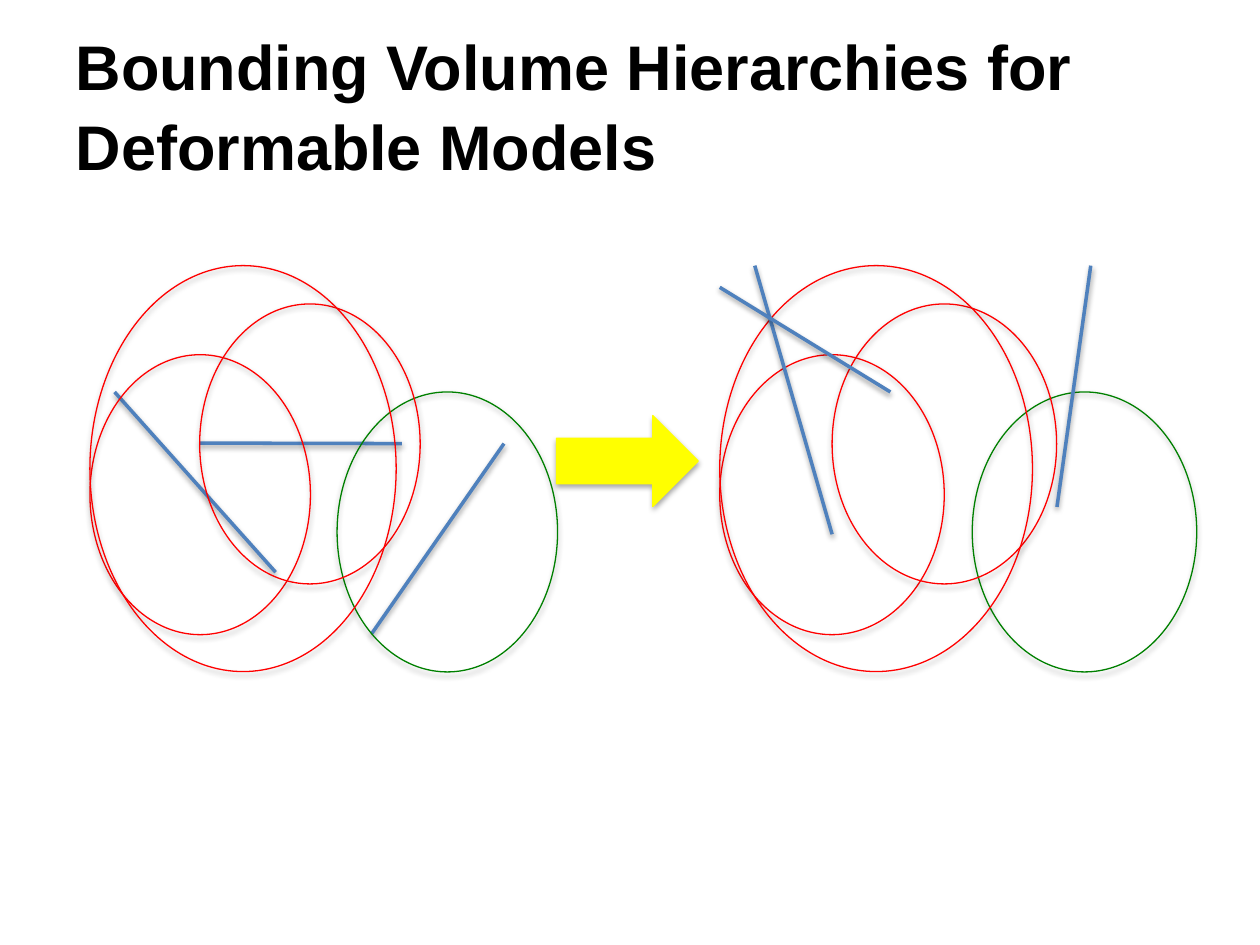
from lxml.etree import SubElement
from pptx import Presentation
from pptx.dml.color import RGBColor
from pptx.enum.shapes import MSO_CONNECTOR as Connector, MSO_SHAPE as Shape
from pptx.enum.text import MSO_ANCHOR as Anchor, MSO_AUTO_SIZE as AutoSize, PP_ALIGN as Align
from pptx.oxml.ns import qn
from pptx.util import Pt

BLACK, RED, GREEN, BLUE, YELLOW = "000000", "FF0000", "008000", "4F81BD", "FFFF00"


def color(value):
    return RGBColor.from_string(value)


class SlideBuilder:
    font = "Arial"
    title_size = 36
    outline_width = 0.75
    segment_width = 2

    def __init__(self, page):
        self.page = page

    def group(self):
        return self.page.shapes.add_group_shape().shapes

    def title(self, text, left, top, width, height):
        box = self.page.shapes.title
        box.left, box.top, box.width, box.height = map(Pt, (left, top, width, height))
        frame = box.text_frame
        frame.text = text
        frame.word_wrap = True
        frame.auto_size = AutoSize.NONE
        frame.vertical_anchor = Anchor.BOTTOM
        frame.margin_left = frame.margin_right = Pt(7.2)
        frame.margin_top = frame.margin_bottom = Pt(7.2)
        para = frame.paragraphs[0]
        para.alignment = Align.LEFT
        para.line_spacing = 1.05
        span = para.runs[0]
        span.font.name = self.font
        span.font.size = Pt(self.title_size)
        span.font.bold = True
        span.font.color.rgb = color(BLACK)

    def shadow(self, element, distance, opacity):
        effects = SubElement(element._element.spPr, qn("a:effectLst"))
        outer = SubElement(effects, qn("a:outerShdw"), blurRad=str(Pt(3.15)),
                           dist=str(Pt(distance)), dir="5400000", rotWithShape="0")
        tint = SubElement(outer, qn("a:srgbClr"), val=BLACK)
        SubElement(tint, qn("a:alpha"), val=str(opacity * 1000))

    def shape(self, shapes, kind, left, top, width, height, line, fill=None):
        item = shapes.add_shape(kind, Pt(left), Pt(top), Pt(width), Pt(height))
        if fill:
            item.fill.solid()
            item.fill.fore_color.rgb = color(fill)
        else:
            item.fill.background()
        item.line.color.rgb = color(line)
        item.line.width = Pt(self.outline_width)
        self.shadow(item, 1.8, 35)

    def segment(self, shapes, x1, y1, x2, y2):
        item = shapes.add_connector(Connector.STRAIGHT, Pt(x1), Pt(y1), Pt(x2), Pt(y2))
        item.line.color.rgb = color(BLUE)
        item.line.width = Pt(self.segment_width)
        self.shadow(item, 1.6, 38)

    def volumes(self, shapes, left, child_width, parent_width, inner_shift, green_shift):
        for shift, top, width, height, line in (
            (green_shift, 224, child_width, 160, GREEN),
            (0, 202.7, child_width, 160, RED),
            (inner_shift, 173.7, child_width, 160, RED),
            (0, 151.8, parent_width, 232, RED),
        ):
            self.shape(shapes, Shape.OVAL, left + shift, top, width, height, line)


def main():
    deck = Presentation()
    deck.slide_width, deck.slide_height = Pt(720), Pt(540)
    page = deck.slides.add_slide(deck.slide_layouts[5])
    builder = SlideBuilder(page)
    builder.title("Bounding Volume Hierarchies for Deformable Models", 36, 21.6, 648, 90)

    before = builder.group()
    for ends in ((65.5, 224, 157.5, 327), (212.5, 362, 288, 253.5), (114, 253.2, 229.7, 253.5)):
        builder.segment(before, *ends)
    builder.volumes(before, 51.4, 126, 175, 62.7, 141.2)

    after = page.shapes
    builder.volumes(after, 411.3, 128.3, 178.7, 64.2, 144.3)
    for ends in ((431.3, 151.8, 475.5, 305.3), (604, 289.7, 623.3, 151.8), (411.3, 164.2, 508.8, 224)):
        builder.segment(after, *ends)

    builder.shape(after, Shape.RIGHT_ARROW, 318, 237.5, 81, 52, YELLOW, YELLOW)
    deck.save("out.pptx")


if __name__ == "__main__":
    main()
